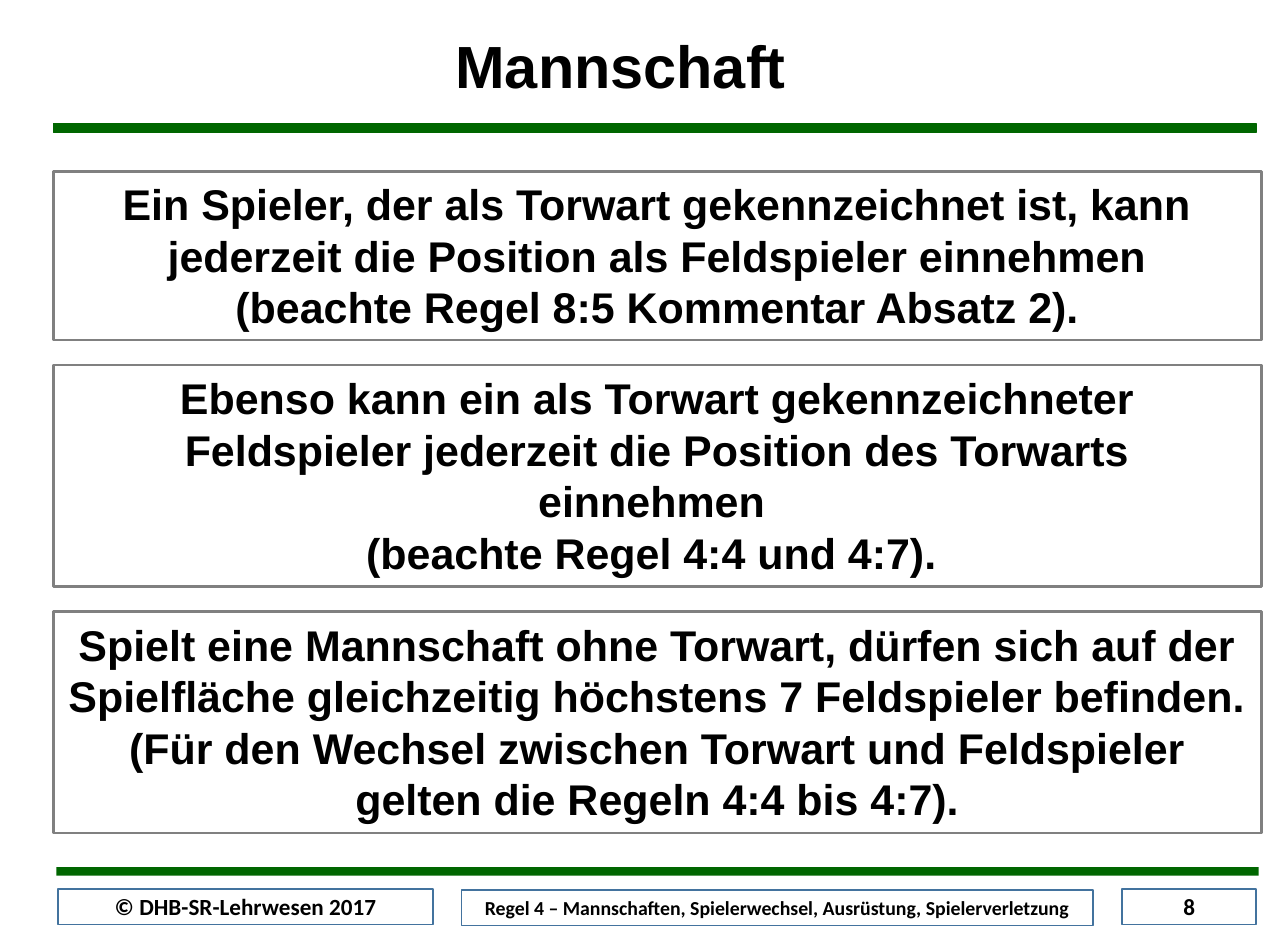
from pptx import Presentation
from pptx.dml.color import RGBColor
from pptx.enum.shapes import MSO_SHAPE
from pptx.enum.text import MSO_ANCHOR, PP_ALIGN
from pptx.util import Pt

RECT = MSO_SHAPE.RECTANGLE
TOP = MSO_ANCHOR.TOP
MIDDLE = MSO_ANCHOR.MIDDLE
CENTER = PP_ALIGN.CENTER

GREEN = "006600"
GRAY = "808080"
BLUE = "43739E"
WHITE = "FFFFFF"
BLACK = "000000"

LEFT = 32.4
WIDTH = 731.5
GAP = 15.2

RULES = [
    (102.2, ["Ein Spieler, der als Torwart gekennzeichnet ist, kann jederzeit "
             "die Position als Feldspieler einnehmen",
             "(beachte Regel 8:5 Kommentar Absatz 2)."]),
    (134, ["Ebenso kann ein als Torwart gekennzeichneter Feldspieler jederzeit "
           "die Position des Torwarts einnehmen ",
           "(beachte Regel 4:4 und 4:7). "]),
    (134, ["Spielt eine Mannschaft ohne Torwart, dürfen sich auf der Spielfläche "
           "gleichzeitig höchstens 7 Feldspieler befinden.",
           "(Für den Wechsel zwischen Torwart und Feldspieler gelten die Regeln "
           "4:4 bis 4:7)."]),
]

FOOTER = [
    (35.3, 538.1, 226.8, "© DHB-SR-Lehrwesen 2017", 14),
    (679.2, 538.1, 81.4, "8", 14),
    (279.4, 538.7, 382.3,
     "Regel 4 – Mannschaften, Spielerwechsel, Ausrüstung, Spielerverletzung", 12),
]


def color(value):
    return RGBColor.from_string(value)


def add_rect(slide, left, top, width, height, fill=None, line=None, weight=1):
    rect = slide.shapes.add_shape(RECT, Pt(left), Pt(top), Pt(width), Pt(height))
    rect.shadow.inherit = False
    if fill:
        rect.fill.solid()
        rect.fill.fore_color.rgb = color(fill)
    else:
        rect.fill.background()
    if line:
        rect.line.color.rgb = color(line)
        rect.line.width = Pt(weight)
    else:
        rect.line.fill.background()
    return rect


def set_text(shape, lines, font, size, anchor=TOP, inset=3.6):
    frame = shape.text_frame
    frame.word_wrap = True
    frame.vertical_anchor = anchor
    frame.margin_left = frame.margin_right = Pt(7.6)
    frame.margin_top = frame.margin_bottom = Pt(inset)
    frame.text = "\n".join(lines)
    for para in frame.paragraphs:
        para.alignment = CENTER
        for run in para.runs:
            run.font.name = font
            run.font.size = Pt(size)
            run.font.bold = True
            run.font.color.rgb = color(BLACK)


def add_title(slide, text):
    title = slide.shapes.add_textbox(Pt(242.6), Pt(18.7), Pt(266.4), Pt(45.4))
    set_text(title, [text], "Arial", 36)
    title.text_frame.paragraphs[0].line_spacing = 0.9


def add_rules(slide):
    top = 103.7
    for height, lines in RULES:
        rect = add_rect(slide, LEFT, top, WIDTH, height, line=GRAY, weight=1.5)
        set_text(rect, lines, "Arial", 26, inset=4)
        top += height + GAP


def add_footer(slide):
    for left, top, width, text, size in FOOTER:
        rect = add_rect(slide, left, top, width, 21.6, WHITE, BLUE)
        set_text(rect, [text], "Calibri", size, MIDDLE)


def main():
    deck = Presentation()
    deck.slide_width = Pt(779.76)
    deck.slide_height = Pt(570.24)
    slide = deck.slides.add_slide(deck.slide_layouts[6])
    add_rect(slide, LEFT, 74.9, 728, 5.4, GREEN, GREEN, 0.75)
    add_rect(slide, 34.1, 524.9, 728, 5.2, GREEN)
    add_footer(slide)
    add_rules(slide)
    add_title(slide, "Mannschaft")
    deck.save("out.pptx")


if __name__ == "__main__":
    main()
